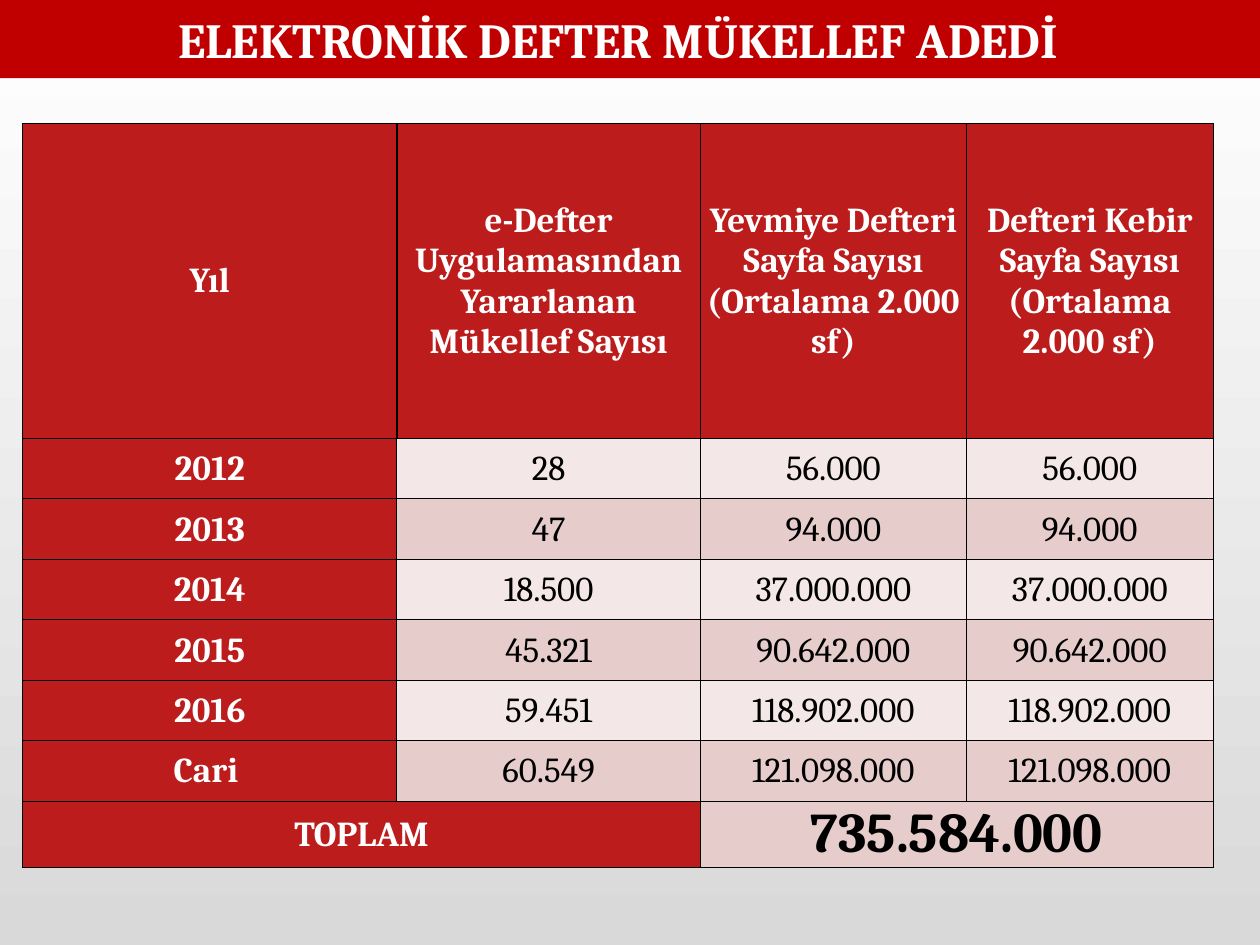
from lxml import etree
from pptx import Presentation
from pptx import util as u
from pptx.dml.color import RGBColor
from pptx.enum import shapes, text
from pptx.oxml.ns import qn

C = {"banner": "C00000", "head": "BC1C1C", "light": "F4E7E7", "dark": "E7CCCC",
     "white": "FFFFFF", "black": "000000", "grey": "D9D9D9"}
FONT = "Cambria"
COLS = [2.97, 2.41, 2.11, 1.96]
ROWS = [2.5] + [0.48] * 6 + [0.5]
HEADER = ["Yıl", "e-Defter Uygulamasından Yararlanan Mükellef Sayısı",
          "Yevmiye Defteri Sayfa Sayısı (Ortalama 2.000 sf)",
          "Defteri Kebir Sayfa Sayısı (Ortalama 2.000 sf)"]
# Year, taxpayers, pages (the same for both ledgers)
DATA = [("2012", "28", "56.000"), ("2013", "47", "94.000"),
        ("2014", "18.500", "37.000.000"), ("2015", "45.321", "90.642.000"),
        ("2016", "59.451", "118.902.000"), ("Cari ", "60.549", "121.098.000")]


def rgb(name):
    return RGBColor.from_string(C[name])


def write(tf, words, color, size=20, bold=True):
    p = tf.paragraphs[0]
    p.alignment = text.PP_ALIGN.CENTER
    r = p.add_run()
    r.text = words
    for key, value in {"name": FONT, "size": u.Pt(size), "bold": bold}.items():
        setattr(r.font, key, value)
    r.font.color.rgb = rgb(color)


def set_borders(cell, widths):
    tcPr = cell._tc.get_or_add_tcPr()
    for i, (side, width) in enumerate(zip("LRTB", widths)):
        ln = etree.Element(qn(f"a:ln{side}"), w=str(u.Pt(width)))
        fill = etree.SubElement(ln, qn("a:solidFill"))
        etree.SubElement(fill, qn("a:srgbClr"), val=C["black"])
        tcPr.insert(i, ln)


def style_cell(cell, words, fill, color, size=20, bold=True):
    margins = {"margin_left": 0.01, "margin_right": 0.01, "margin_top": 0.01, "margin_bottom": 0}
    for key, value in margins.items():
        setattr(cell, key, u.Inches(value))
    cell.vertical_anchor = text.MSO_ANCHOR.MIDDLE
    cell.fill.solid()
    cell.fill.fore_color.rgb = rgb(fill)
    write(cell.text_frame, words, color, size, bold)


def paint_background(s):
    fill = s.background.fill
    fill.gradient()
    fill.gradient_angle = 270
    for stop, name in zip(fill.gradient_stops, ("white", "grey")):
        stop.color.rgb = rgb(name)


def add_banner(s, x, y, w, h):
    sp = s.shapes.add_shape(shapes.MSO_SHAPE.RECTANGLE, x, y, w, h)
    sp.shadow.inherit = False
    sp.fill.solid()
    sp.fill.fore_color.rgb = rgb("banner")
    sp.line.fill.background()
    tf = sp.text_frame
    # The wider right margin sets the title slightly left of centre
    frame = {"word_wrap": True, "vertical_anchor": text.MSO_ANCHOR.MIDDLE,
             "margin_left": u.Inches(0.1), "margin_right": u.Inches(0.29)}
    for key, value in frame.items():
        setattr(tf, key, value)
    write(tf, "ELEKTRONİK DEFTER MÜKELLEF ADEDİ", "white", 28)


def add_ledger_table(s, x, y, w, h):
    table = s.shapes.add_table(len(ROWS), len(COLS), x, y, w, h).table
    for col, share in zip(table.columns, COLS):
        col.width = int(w * share / sum(COLS))
    for row, share in zip(table.rows, ROWS):
        row.height = int(h * share / sum(ROWS))

    # Header row
    for c, words in enumerate(HEADER):
        style_cell(table.cell(0, c), words, "head", "white")

    # One banded row for each year
    for r, (year, payers, pages) in enumerate(DATA, 1):
        style_cell(table.cell(r, 0), year, "head", "white")
        band = "light" if r % 2 else "dark"
        for c, words in enumerate((payers, pages, pages), 1):
            style_cell(table.cell(r, c), words, band, "black", bold=False)

    # Total row, merged in pairs
    last = len(ROWS) - 1
    for c in (0, 2):
        table.cell(last, c).merge(table.cell(last, c + 1))
    style_cell(table.cell(last, 0), "TOPLAM", "head", "white")
    style_cell(table.cell(last, 2), "735.584.000", "dark", "black", 32)

    # Heavier uprights in the header and at the left edge
    for r in range(len(ROWS)):
        for c in range(len(COLS)):
            left = 1 if r == 0 or c == 0 else 0.5
            right = 1 if r == 0 and c < len(COLS) - 1 else 0.5
            set_borders(table.cell(r, c), (left, right, 0.5, 0.5))


def main():
    prs = Presentation()
    prs.slide_width, prs.slide_height = u.Inches(10), u.Inches(7.5)
    s = prs.slides.add_slide(prs.slide_layouts[6])
    paint_background(s)
    add_banner(s, 0, 0, prs.slide_width, u.Inches(0.62))
    add_ledger_table(s, u.Inches(0.18), u.Inches(0.98), u.Inches(sum(COLS)), u.Inches(sum(ROWS)))
    prs.save("out.pptx")


if __name__ == "__main__":
    main()
